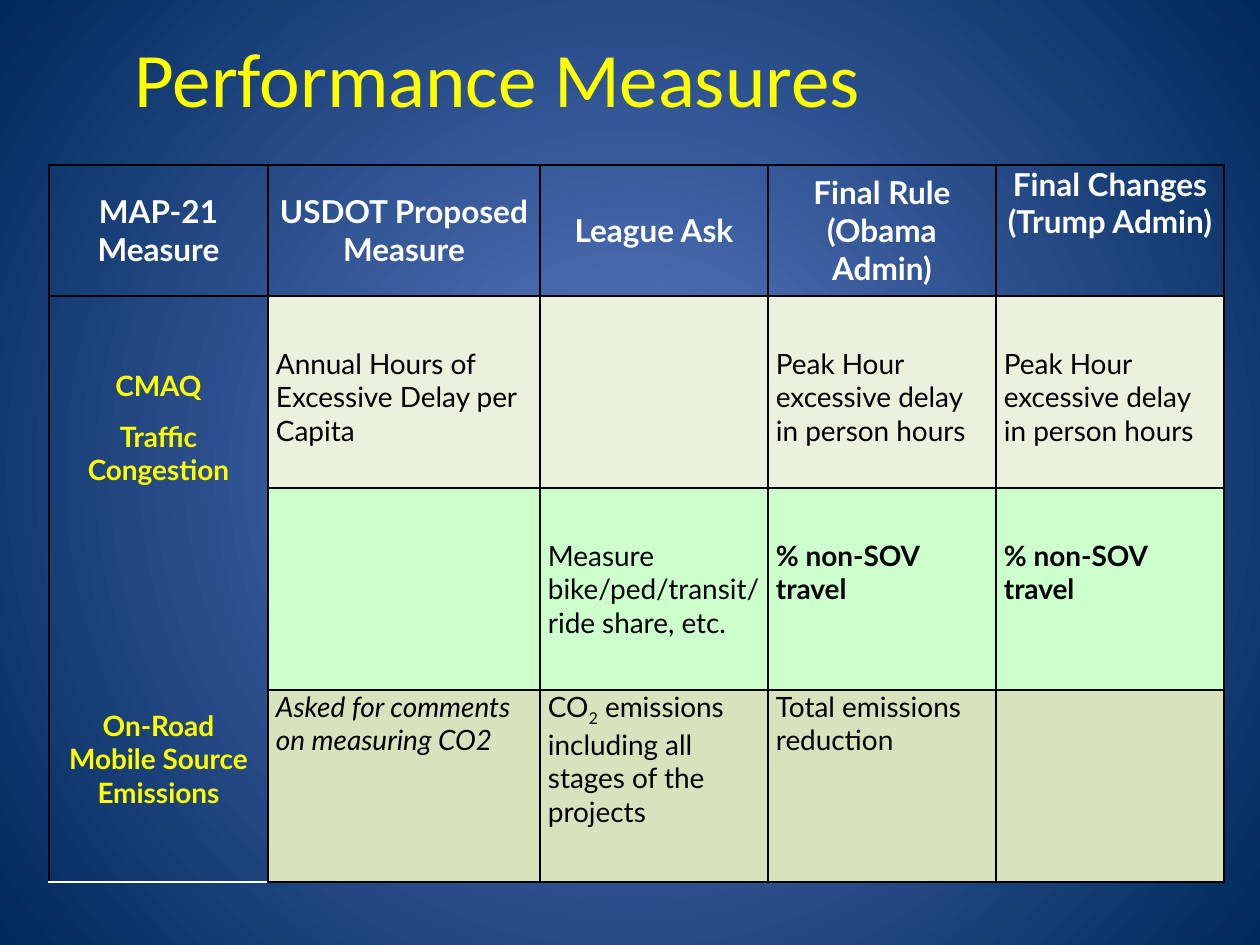
from lxml.etree import SubElement
from pptx import Presentation
from pptx.dml.color import RGBColor
from pptx.enum.text import MSO_ANCHOR as Anchor, PP_ALIGN as Align
from pptx.oxml import parse_xml
from pptx.oxml.ns import nsdecls, qn
from pptx.util import Pt

PX = 914400 // 126
YELLOW = RGBColor(0xFF, 0xFF, 0x00)
WHITE = RGBColor(0xFF, 0xFF, 0xFF)
BLACK = RGBColor(0x00, 0x00, 0x00)
GLOW = RGBColor(0x5E, 0x7C, 0xC5)
NAVY = RGBColor(0x00, 0x29, 0x5C)
CREAM = RGBColor(0xEA, 0xF1, 0xDD)
MINT = RGBColor(0xCC, 0xFF, 0xCC)
OLIVE = RGBColor(0xD6, 0xE3, 0xBC)

TITLE = "Performance Measures"
HEADERS = ["MAP-21 Measure", "USDOT Proposed Measure", "League Ask",
           "Final Rule (Obama Admin)", "Final Changes (Trump Admin)"]
TOPICS = ["CMAQ", "Traffic Congestion", "On-Road Mobile Source Emissions"]
PEAK = "Peak Hour excessive delay in person hours"
SHARE = "% non-SOV travel"
# Pieces between bars are subscripts.
MEASURES = [
    ["Annual Hours of Excessive Delay per Capita", "", PEAK, PEAK],
    ["", "Measure bike/ped/transit/ ride share, etc.", SHARE, SHARE],
    ["Asked for comments on measuring CO2",
     "CO|2| emissions including all stages of the projects",
     "Total emissions reduction", ""],
]
ROW_STYLES = [(CREAM, 51), (MINT, 51), (OLIVE, 0)]
COLUMN_WIDTHS = [219, 272, 228, 228, 228]
ROW_HEIGHTS = [131, 192, 202, 192]
TABLE_LEFT, TABLE_TOP = 49, 165


def place(shape, left, top, width, height):
    shape.left, shape.top = left * PX, top * PX
    shape.width, shape.height = width * PX, height * PX


def paint_background(slide):
    fill = slide.background.fill
    fill.gradient()
    for stop, color in zip(fill.gradient_stops, (GLOW, NAVY)):
        stop.color.rgb = color
    gradient = slide.background._cSld.find(".//" + qn("a:gradFill"))
    gradient.remove(gradient.find(qn("a:lin")))
    circle = SubElement(gradient, qn("a:path"), path="circle")
    SubElement(circle, qn("a:fillToRect"), l="50000", t="50000", r="50000", b="50000")


def draw_borders(cell, sides):
    properties = cell._tc.get_or_add_tcPr()
    for index, side in enumerate(sides):
        properties.insert(index, parse_xml(
            f'<a:ln{side} {nsdecls("a")} w="12700"><a:solidFill>'
            f'<a:srgbClr val="{BLACK}"/></a:solidFill></a:ln{side}>'))


def write_cell(cell, paragraphs, size, color, bold=False, italic=False,
               align=Align.LEFT, anchor=Anchor.TOP, top=0):
    cell.margin_left = cell.margin_right = 8 * PX
    cell.margin_top, cell.margin_bottom = top * PX, 0
    cell.vertical_anchor = anchor
    frame = cell.text_frame
    frame.text = "\n".join(paragraphs)
    for para, text in zip(frame.paragraphs, paragraphs):
        para.alignment = align
        para.space_after = Pt(10)
        para.font.size = Pt(size)
        para.text = ""
        for index, piece in enumerate(text.split("|")):
            span = para.add_run()
            span.text = piece
            font = span.font
            font.name, font.size = "Lato", Pt(size)
            font.bold, font.italic = bold, italic
            font.color.rgb = color
            if index % 2:
                span._r.get_or_add_rPr().set("baseline", "-25000")


def add_title(slide):
    title = slide.shapes.title
    place(title, 122, 19, 1144, 116)
    frame = title.text_frame
    frame.text = TITLE
    frame.vertical_anchor = Anchor.MIDDLE
    para = frame.paragraphs[0]
    para.alignment = Align.LEFT
    font = para.runs[0].font
    font.name, font.size, font.color.rgb = "Calibri", Pt(44), YELLOW


def add_measures(slide):
    frame = slide.shapes.add_table(
        len(ROW_HEIGHTS), len(COLUMN_WIDTHS), TABLE_LEFT * PX, TABLE_TOP * PX,
        sum(COLUMN_WIDTHS) * PX, sum(ROW_HEIGHTS) * PX)
    table = frame.table
    table.first_row = table.horz_banding = False
    for column, width in zip(table.columns, COLUMN_WIDTHS):
        column.width = width * PX
    for row, height in zip(table.rows, ROW_HEIGHTS):
        row.height = height * PX

    last = len(ROW_HEIGHTS) - 1
    for row in range(last + 1):
        for column in range(len(COLUMN_WIDTHS)):
            cell = table.cell(row, column)
            sides = ["L", "R"]
            if column or row < 2:
                sides.append("T")
            if column or row in (0, last):
                sides.append("B")
            draw_borders(cell, sides)
            cell.fill.background()

    for column, text in enumerate(HEADERS):
        anchor = Anchor.TOP if column == len(HEADERS) - 1 else Anchor.MIDDLE
        write_cell(table.cell(0, column), [text], 18, WHITE, bold=True,
                   align=Align.CENTER, anchor=anchor)

    topics = table.cell(1, 0)
    topics.merge(table.cell(last, 0))
    write_cell(topics, TOPICS, 16, YELLOW, bold=True,
               align=Align.CENTER, anchor=Anchor.MIDDLE)
    topics.text_frame.paragraphs[1].space_after = Pt(127)

    for row, (texts, (color, top)) in enumerate(zip(MEASURES, ROW_STYLES), 1):
        for column, text in enumerate(texts, 1):
            cell = table.cell(row, column)
            cell.fill.solid()
            cell.fill.fore_color.rgb = color
            write_cell(cell, [text], 16, BLACK, bold=text == SHARE,
                       italic=text.startswith("Asked"), top=top)


def main():
    deck = Presentation()
    deck.slide_width, deck.slide_height = 1260 * PX, 945 * PX
    slide = deck.slides.add_slide(deck.slide_layouts[5])
    paint_background(slide)
    add_title(slide)
    add_measures(slide)
    deck.save("out.pptx")


if __name__ == "__main__":
    main()
